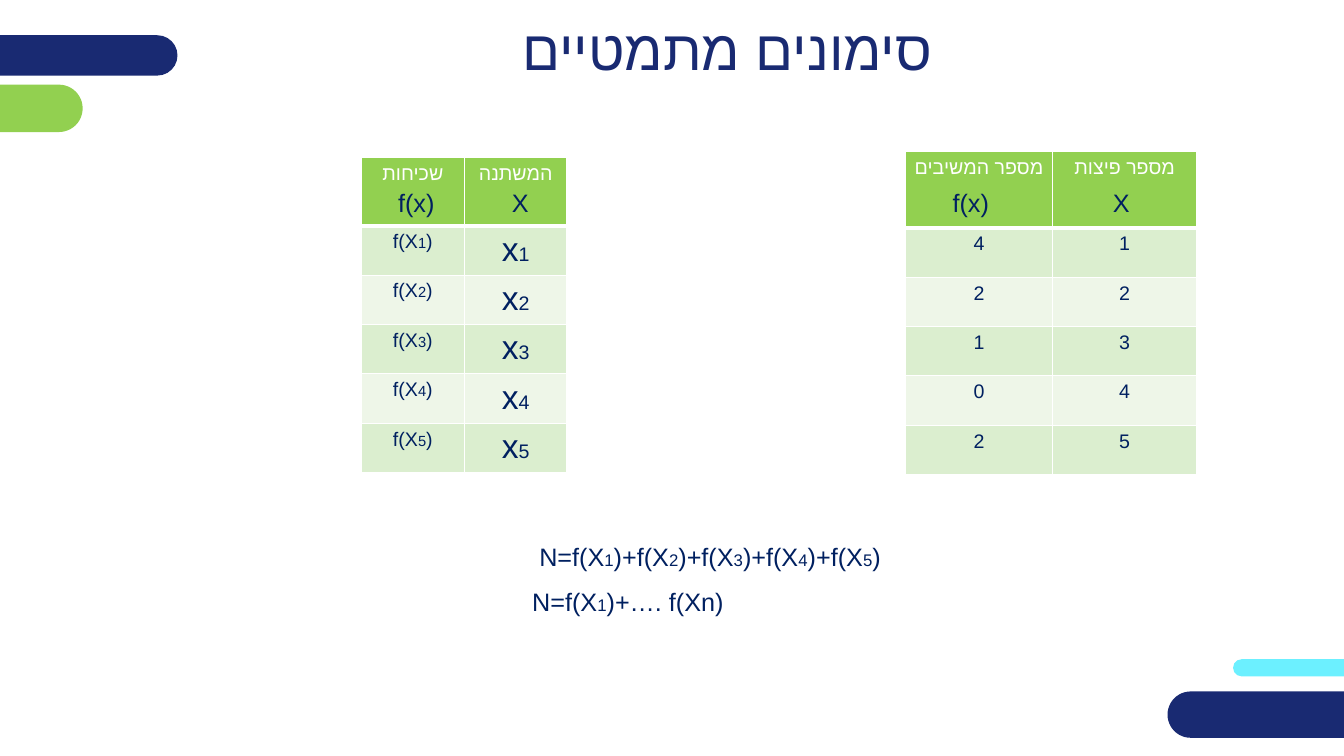
from lxml.etree import SubElement
from pptx import Presentation
from pptx.dml.color import RGBColor
from pptx.enum.shapes import MSO_SHAPE as Shape
from pptx.enum.text import MSO_ANCHOR as Anchor, PP_ALIGN as Align
from pptx.oxml.ns import qn
from pptx.util import Inches, Pt

COLORS = {"navy": "192A72", "text": "002060", "green": "92D050", "cyan": "6CF0FF",
          "white": "FFFFFF", "odd": "DBEECF", "even": "EEF6E8"}
FONT = "Arial"
ROW_HEIGHT = 0.49
HEADER_MARGIN = 0.02


def color(name):
    """Return the named palette colour."""
    return RGBColor.from_string(COLORS[name])


def format_run(run, size, color_name):
    """Apply the slide's font to a run, for Latin and Hebrew letters."""
    run.font.name = FONT
    run.font.size = Pt(size)
    run.font.bold = False
    run.font.color.rgb = color(color_name)
    SubElement(run.font._element, qn("a:cs"), typeface=FONT)


def fill_paragraph(paragraph, pieces, sizes, color_name="text", align=Align.CENTER, rtl=False):
    """Write pieces as runs whose sizes alternate."""
    paragraph.alignment = align
    if rtl:
        paragraph._p.get_or_add_pPr().set("rtl", "1")
    for index, piece in enumerate(pieces):
        run = paragraph.add_run()
        run.text = piece
        format_run(run, sizes[index % len(sizes)], color_name)


def add_pill(slide, left, top, width, height, color_name):
    """Draw one fully rounded bar."""
    pill = slide.shapes.add_shape(Shape.ROUNDED_RECTANGLE, Inches(left), Inches(top),
                                  Inches(width), Inches(height))
    pill.adjustments[0] = 0.5
    pill.shadow.inherit = False
    pill.fill.solid()
    pill.fill.fore_color.rgb = color(color_name)
    pill.line.fill.background()


def add_title(slide, left, top, width, height):
    """Place and format the title placeholder."""
    title = slide.shapes.title
    title.left, title.top = Inches(left), Inches(top)
    title.width, title.height = Inches(width), Inches(height)
    title.text_frame.vertical_anchor = Anchor.MIDDLE
    fill_paragraph(title.text_frame.paragraphs[0], ["סימונים מתמטיים"], [40], "navy", rtl=True)


def add_text_box(slide, left, top, width, height, wrap=True):
    """Add an empty text box and return its text frame."""
    text_frame = slide.shapes.add_textbox(Inches(left), Inches(top), Inches(width),
                                          Inches(height)).text_frame
    text_frame.word_wrap = wrap
    return text_frame


def set_borders(cell, row):
    """Give a cell white borders, thick below the header row."""
    widths = {"a:lnL": 1, "a:lnR": 1, "a:lnT": 3 if row == 1 else 1, "a:lnB": 3 if row == 0 else 1}
    properties = cell._tc.get_or_add_tcPr()
    for tag, width in widths.items():
        line = SubElement(properties, qn(tag), w=str(Pt(width)))
        fill = SubElement(line, qn("a:solidFill"))
        SubElement(fill, qn("a:srgbClr"), val=COLORS["white"])


def add_frequency_table(slide, left, top, column_widths, header_height, headers, rows):
    """Add a table whose body cells are (pieces, sizes, rtl)."""
    cells = [[([header], [14], True) for header in headers]] + rows
    heights = [header_height] + [ROW_HEIGHT] * len(rows)
    table = slide.shapes.add_table(len(cells), len(headers), Inches(left), Inches(top),
                                   Inches(sum(column_widths)), Inches(sum(heights))).table
    for column, width in zip(table.columns, column_widths):
        column.width = Inches(width)
    for row, (contents, height) in enumerate(zip(cells, heights)):
        table.rows[row].height = Inches(height)
        fill_name = "green" if row == 0 else "odd" if row % 2 else "even"
        for column, (pieces, sizes, rtl) in enumerate(contents):
            cell = table.cell(row, column)
            set_borders(cell, row)
            if row == 0:
                cell.margin_left = cell.margin_right = Inches(HEADER_MARGIN)
            cell.fill.solid()
            cell.fill.fore_color.rgb = color(fill_name)
            fill_paragraph(cell.text_frame.paragraphs[0], pieces, sizes,
                           "text" if row else "white", rtl=rtl)


def add_header_symbols(slide, frequency_left, variable_left, top):
    """Write f(x) and X over a table's header row."""
    frequency = add_text_box(slide, frequency_left, top, 0.98, 0.4)
    fill_paragraph(frequency.paragraphs[0], ["f(x)"], [18], align=Align.LEFT)
    variable = add_text_box(slide, variable_left, top, 0.33, 0.4, wrap=False)
    fill_paragraph(variable.paragraphs[0], ["X"], [18])


def add_formulas(slide, left, top, width, height):
    """Write the two sums that give N."""
    text_frame = add_text_box(slide, left, top, width, height)
    full_sum = ["N=f(X"]
    for index in range(1, 6):
        full_sum += [str(index), ")+f(X" if index < 5 else ")"]
    general_sum = ["N=f(X", "1", ")+…. f(Xn)"]
    first, second = text_frame.paragraphs[0], text_frame.add_paragraph()
    first._p.get_or_add_pPr().set("indent", str(Inches(0.07)))
    for paragraph, pieces in ((first, full_sum), (second, general_sum)):
        paragraph.line_spacing = 1.5
        fill_paragraph(paragraph, pieces, [18, 12], align=Align.LEFT)


def main():
    """Build and save the slide."""
    presentation = Presentation()
    presentation.slide_width, presentation.slide_height = Inches(13.33), Inches(7.5)
    slide = presentation.slides.add_slide(presentation.slide_layouts[5])
    add_pill(slide, 12.23, 6.54, 1.74, 0.17, "cyan")
    add_pill(slide, -0.45, 0.84, 1.27, 0.47, "green")
    add_pill(slide, -0.53, 0.35, 2.29, 0.4, "navy")
    add_pill(slide, 11.58, 6.86, 2.4, 0.46, "navy")
    add_title(slide, 1.76, 0.13, 10.91, 0.7)

    answers = [4, 2, 1, 0, 2]
    pizza_rows = [[([str(count)], [14], True), ([str(pizzas)], [14], True)]
                  for pizzas, count in enumerate(answers, 1)]
    symbol_rows = [[(["f(X", str(index), ")"], [14, 10.5], False),
                    (["x", str(index)], [24, 14], True)] for index in range(1, 6)]
    add_frequency_table(slide, 8.98, 1.5, [1.46, 1.43], 0.76,
                        ["מספר המשיבים", "מספר פיצות"], pizza_rows)
    add_frequency_table(slide, 3.58, 1.56, [1.03, 1.01], 0.68,
                        ["שכיחות", "המשתנה"], symbol_rows)
    add_formulas(slide, 5.18, 5.17, 3.68, 2.33)
    add_header_symbols(slide, 3.85, 4.98, 1.81)
    add_header_symbols(slide, 9.35, 10.94, 1.81)
    presentation.save("out.pptx")


if __name__ == "__main__":
    main()
